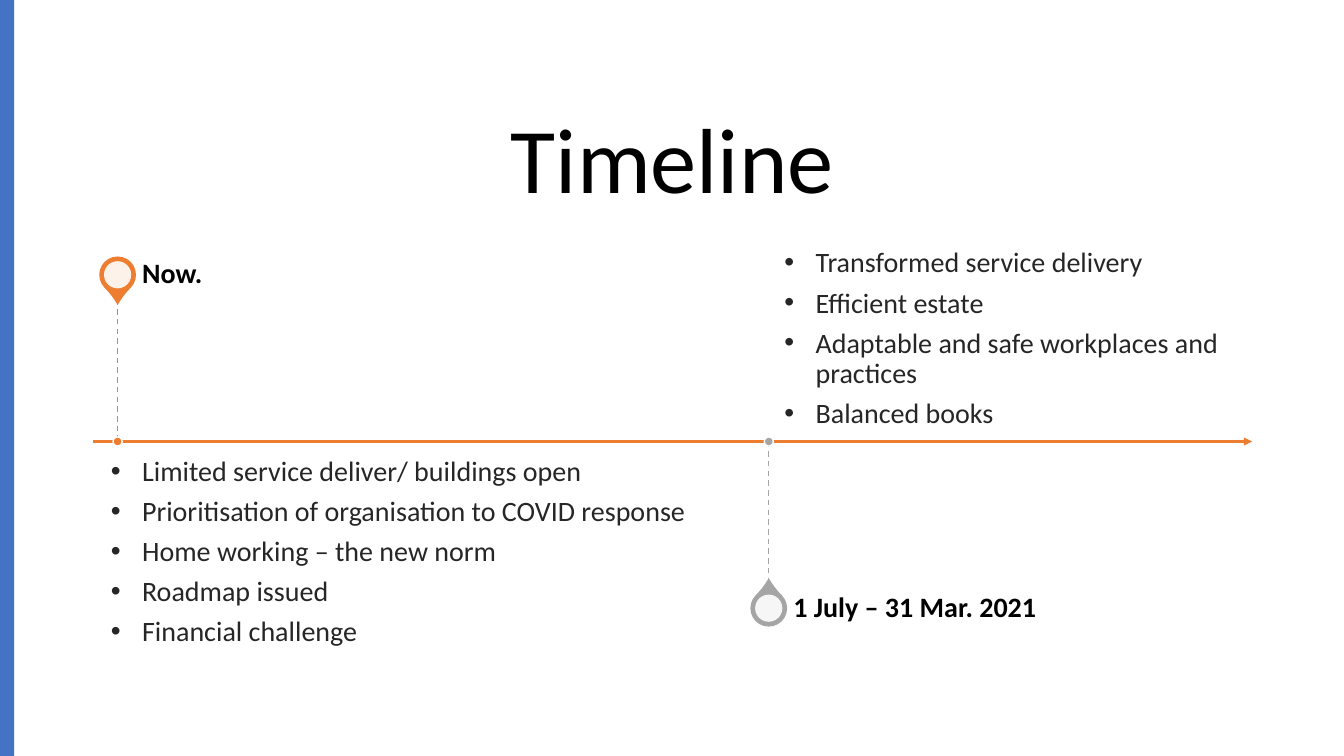
import pptx
import pptx.dml.color
import pptx.enum.dml
import pptx.enum.shapes
import pptx.enum.text
import pptx.oxml
import pptx.oxml.ns
import pptx.util
from lxml import etree

WIDTH = pptx.util.Inches(13.33)
HEIGHT = pptx.util.Inches(7.5)
COLUMN = WIDTH / 100
ROW = HEIGHT / 100

FONT = "Calibri"
BLACK, DARK, WHITE = "000000", "262626", "FFFFFF"
BLUE, ORANGE, GREY = "4472C4", "ED7D31", "A5A5A5"

AXIS = 58.4  # row of the time axis
PIN_REACH = 22.05  # rows from the axis to the centre of a pin
STEM_REACH = 18.8  # rows from the axis to the tip of a pin

SHAPE = pptx.enum.shapes.MSO_SHAPE
ANCHOR = pptx.enum.text.MSO_ANCHOR

NOW_POINTS = [
    "Limited service deliver/ buildings open",
    "Prioritisation of organisation to COVID response",
    "Home working – the new norm",
    "Roadmap issued",
    "Financial challenge",
]
GOAL_POINTS = [
    "Transformed service delivery",
    "Efficient estate",
    "Adaptable and safe workplaces and practices",
    "Balanced books",
]


def colour(hex_string):
    return pptx.dml.color.RGBColor.from_string(hex_string)


def box(left, top, width, height):
    """Turn columns and rows into slide lengths."""
    return (int(left * COLUMN), int(top * ROW),
            int(width * COLUMN), int(height * ROW))


def add_filled(slide, preset, position, fill, line=None):
    shape = slide.shapes.add_shape(preset, *position)
    shape.shadow.inherit = False
    shape.fill.solid()
    shape.fill.fore_color.rgb = colour(fill)
    if line:
        shape.line.color.rgb = colour(line)
        shape.line.width = pptx.util.Pt(1)
    else:
        shape.line.fill.background()
    return shape


def add_centred(slide, preset, column, row, size, fill, line=None):
    """Add a shape of equal sides, its size in rows, around a point."""
    side = size * ROW
    position = (int(column * COLUMN - side / 2), int(row * ROW - side / 2),
                int(side), int(side))
    return add_filled(slide, preset, position, fill, line)


def add_line(slide, start, end, line_colour, points):
    connector = slide.shapes.add_connector(
        pptx.enum.shapes.MSO_CONNECTOR.STRAIGHT,
        *box(*start, *end))
    connector.line.color.rgb = colour(line_colour)
    connector.line.width = pptx.util.Pt(points)
    etree.SubElement(connector._element.spPr, pptx.oxml.ns.qn("a:effectLst"))
    return connector


def add_axis(slide):
    axis = add_line(slide, (6.9, AXIS), (93.17, AXIS), ORANGE, 1.5)
    tail = etree.SubElement(axis.line._get_or_add_ln(),
                            pptx.oxml.ns.qn("a:tailEnd"))
    tail.set("type", "triangle")


def format_paragraph(paragraph, size, text_colour, bold=False):
    paragraph.line_spacing = 0.9
    paragraph.font.name = FONT
    paragraph.font.size = pptx.util.Pt(size)
    paragraph.font.bold = bold
    paragraph.font.color.rgb = colour(text_colour)


def add_bullet(paragraph):
    properties = paragraph._p.get_or_add_pPr()
    indent = pptx.util.Inches(0.31)
    properties.set("marL", str(indent))
    properties.set("indent", str(-indent))
    for tag, name, value in (("a:buFont", "typeface", "Arial"),
                             ("a:buChar", "char", "•")):
        etree.SubElement(properties, pptx.oxml.ns.qn(tag)).set(name, value)


def add_text(slide, position, lines, insets, anchor, text_colour,
             bold=False, bulleted=False):
    """Add a text box with one paragraph a line; insets are in inches."""
    frame = slide.shapes.add_textbox(*position).text_frame
    frame.word_wrap = True
    frame.vertical_anchor = anchor
    (frame.margin_left, frame.margin_top,
     frame.margin_right, frame.margin_bottom) = map(pptx.util.Inches, insets)
    frame.text = "\n".join(lines)
    for paragraph in frame.paragraphs:
        paragraph.space_after = pptx.util.Pt(7)
        if bulleted:
            add_bullet(paragraph)
        format_paragraph(paragraph, 20, text_colour, bold)


def add_milestone(slide, column, label, accent, direction):
    """Add a pin with its label; direction is -1 above the axis, 1 below."""
    pin_row = AXIS + direction * PIN_REACH
    pin = add_centred(slide, SHAPE.TEAR, column, pin_row, 4.67, accent, accent)
    pin.adjustments[0] = 1.15
    pin.rotation = 135 if direction < 0 else 315
    centre = add_centred(slide, SHAPE.OVAL, column, pin_row, 3.6, WHITE)
    fill = centre.fill._xPr.find(".//" + pptx.oxml.ns.qn("a:srgbClr"))
    etree.SubElement(fill, pptx.oxml.ns.qn("a:alpha")).set("val", "90000")
    add_text(slide, box(column + 1.83, pin_row - 3.33, 31.36, 6.67), [label],
             (0, 0, 0.14, 0), ANCHOR.MIDDLE, BLACK, bold=True)
    ends = sorted([AXIS, AXIS + direction * STEM_REACH])
    stem = add_line(slide, (column, ends[0]), (column, ends[1]), accent, 1)
    stem.line.dash_style = pptx.enum.dml.MSO_LINE.DASH
    add_centred(slide, SHAPE.OVAL, column, AXIS, 1.2, accent, WHITE)


def add_title(slide, text):
    title = slide.shapes.title
    title.left, title.top, title.width, title.height = box(6.9, 12, 86.27, 19.33)
    title.text_frame.text = text
    title.text_frame.vertical_anchor = ANCHOR.MIDDLE
    paragraph = title.text_frame.paragraphs[0]
    paragraph.alignment = pptx.enum.text.PP_ALIGN.CENTER
    format_paragraph(paragraph, 66, BLACK)


def main():
    presentation = pptx.Presentation()
    presentation.slide_width = WIDTH
    presentation.slide_height = HEIGHT
    slide = presentation.slides.add_slide(presentation.slide_layouts[5])

    add_title(slide, "Timeline")
    add_filled(slide, SHAPE.RECTANGLE, box(0, 0, 1.05, 100), BLUE)
    add_axis(slide)
    add_milestone(slide, 8.75, "Now.", ORANGE, -1)
    add_milestone(slide, 57.2, "1 July – 31 Mar. 2021", GREY, 1)
    add_text(slide, box(8.25, 59.47, 48.09, 26.93), NOW_POINTS,
             (0, 0.08, 0, 0.12), ANCHOR.TOP, DARK, bulleted=True)
    add_text(slide, box(58.36, 39.6, 36.46, 18.8), GOAL_POINTS,
             (0, 0.19, 0.12, 0.12), ANCHOR.BOTTOM, DARK, bulleted=True)

    presentation.save("out.pptx")


if __name__ == "__main__":
    main()
